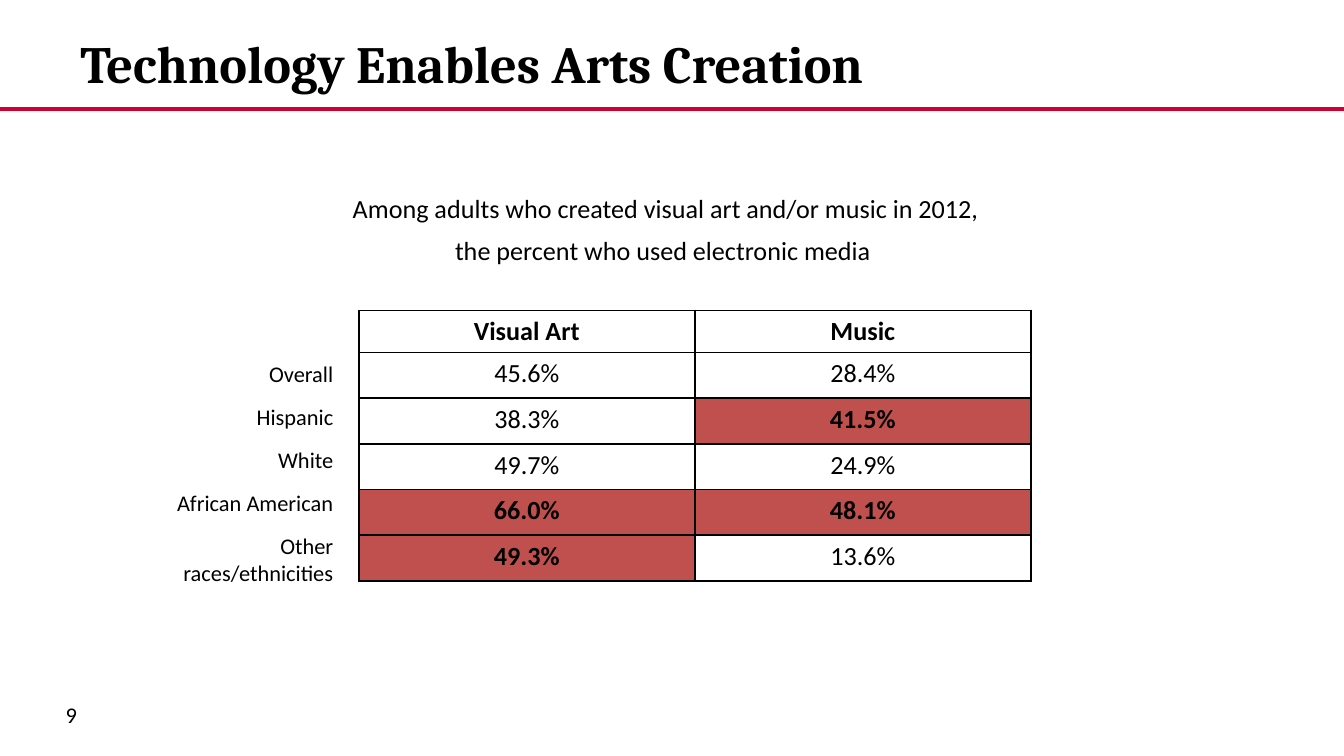
from dataclasses import dataclass

from lxml.etree import SubElement
from pptx import Presentation
from pptx.dml.color import RGBColor
from pptx.enum.shapes import MSO_CONNECTOR
from pptx.enum.text import MSO_ANCHOR, PP_ALIGN
from pptx.oxml.ns import qn
from pptx.util import Inches, Pt


@dataclass(frozen=True)
class Theme:
    ink: str = "000000"
    paper: str = "FFFFFF"
    rule: str = "D20032"
    highlight: str = "C0504D"
    heading_font: str = "Cambria"
    body_font: str = "Calibri"
    title_size: int = 28
    table_size: int = 14
    label_size: int = 12


THEME = Theme()

CAPTION = [
    ["Among adults who created visual art and/or music in 2012,"],
    ["the percent who used electronic media "],
]
GROUPS = [["Overall"], ["Hispanic"], ["White"], ["African American"],
          ["Other\nraces/ethnicities"]]
SHARES = [
    ["Visual Art", "Music"],
    ["45.6%", "28.4%"],
    ["38.3%", "41.5%"],
    ["49.7%", "24.9%"],
    ["66.0%", "48.1%"],
    ["49.3%", "13.6%"],
]
HIGHLIGHTED = {(2, 1), (4, 0), (4, 1), (5, 0)}


def style_text(frame, size, align, font=THEME.body_font, bold=False):
    for paragraph in frame.paragraphs:
        paragraph.alignment = align
        paragraph.font.name = font
        paragraph.font.size = Pt(size)
        paragraph.font.bold = bold
        paragraph.font.color.rgb = RGBColor.from_string(THEME.ink)


def add_text(slide, text, left, top, width, height, size, align, **style):
    box = slide.shapes.add_textbox(Inches(left), Inches(top), Inches(width), Inches(height))
    frame = box.text_frame
    frame.word_wrap = True
    frame.vertical_anchor = MSO_ANCHOR.MIDDLE
    frame.text = text
    style_text(frame, size, align, **style)


def add_rule(slide, top, width):
    rule = slide.shapes.add_connector(
        MSO_CONNECTOR.STRAIGHT, 0, Inches(top), Inches(width), Inches(top))
    rule.line.color.rgb = RGBColor.from_string(THEME.rule)
    rule.line.width = Pt(2)
    SubElement(rule._element.spPr, qn("a:effectLst"))


def set_borders(cell, color):
    """Draw all four cell edges in one colour, or none when color is None."""
    properties = cell._tc.get_or_add_tcPr()
    for side in ("lnL", "lnR", "lnT", "lnB"):
        edge = SubElement(properties, qn(f"a:{side}"), w=str(Pt(1)))
        if color is None:
            SubElement(edge, qn("a:noFill"))
        else:
            SubElement(SubElement(edge, qn("a:solidFill")), qn("a:srgbClr"), val=color)


def add_grid(slide, rows, left, top, col_width, heights, size, align,
             border=None, header=False, highlighted=frozenset()):
    columns = len(rows[0])
    table = slide.shapes.add_table(
        len(rows), columns, Inches(left), Inches(top),
        Inches(col_width * columns), Inches(sum(heights))).table
    table.first_row = table.horz_banding = False
    for column in table.columns:
        column.width = Inches(col_width)
    for r, (values, height) in enumerate(zip(rows, heights)):
        table.rows[r].height = Inches(height)
        for c, value in enumerate(values):
            cell = table.cell(r, c)
            cell.text = value
            cell.margin_top = cell.margin_bottom = Inches(0.04)
            marked = (r, c) in highlighted
            style_text(cell.text_frame, size, align, bold=marked or (header and r == 0))
            set_borders(cell, border)
            if marked:
                cell.fill.solid()
                cell.fill.fore_color.rgb = RGBColor.from_string(THEME.highlight)
            else:
                cell.fill.background()


def main():
    prs = Presentation()
    # Widescreen 16:9
    prs.slide_width = Inches(10)
    prs.slide_height = prs.slide_width * 9 // 16
    slide = prs.slides.add_slide(prs.slide_layouts[6])

    # Title band
    add_rule(slide, 0.81, 10)
    add_text(slide, "Technology Enables Arts Creation", 0.5, 0.12, 9, 0.69,
             THEME.title_size, PP_ALIGN.LEFT, font=THEME.heading_font, bold=True)

    # Caption above the figures
    add_grid(slide, CAPTION, 1.33, 1.4, 7.25, [0.31] * 2,
             THEME.table_size, PP_ALIGN.CENTER, border=THEME.paper)

    # Shares by art form, with the group labels to their left
    add_grid(slide, SHARES, 2.67, 2.31, 2.5, [0.31] + [0.34] * 5,
             THEME.table_size, PP_ALIGN.CENTER, border=THEME.ink,
             header=True, highlighted=HIGHLIGHTED)
    add_grid(slide, GROUPS, 0.58, 2.65, 2, [0.32] * 4 + [0.55],
             THEME.label_size, PP_ALIGN.RIGHT)

    # Page number
    add_text(slide, "9", 0.25, 5.17, 0.42, 0.3, THEME.label_size, PP_ALIGN.RIGHT)

    prs.save("out.pptx")


if __name__ == "__main__":
    main()
